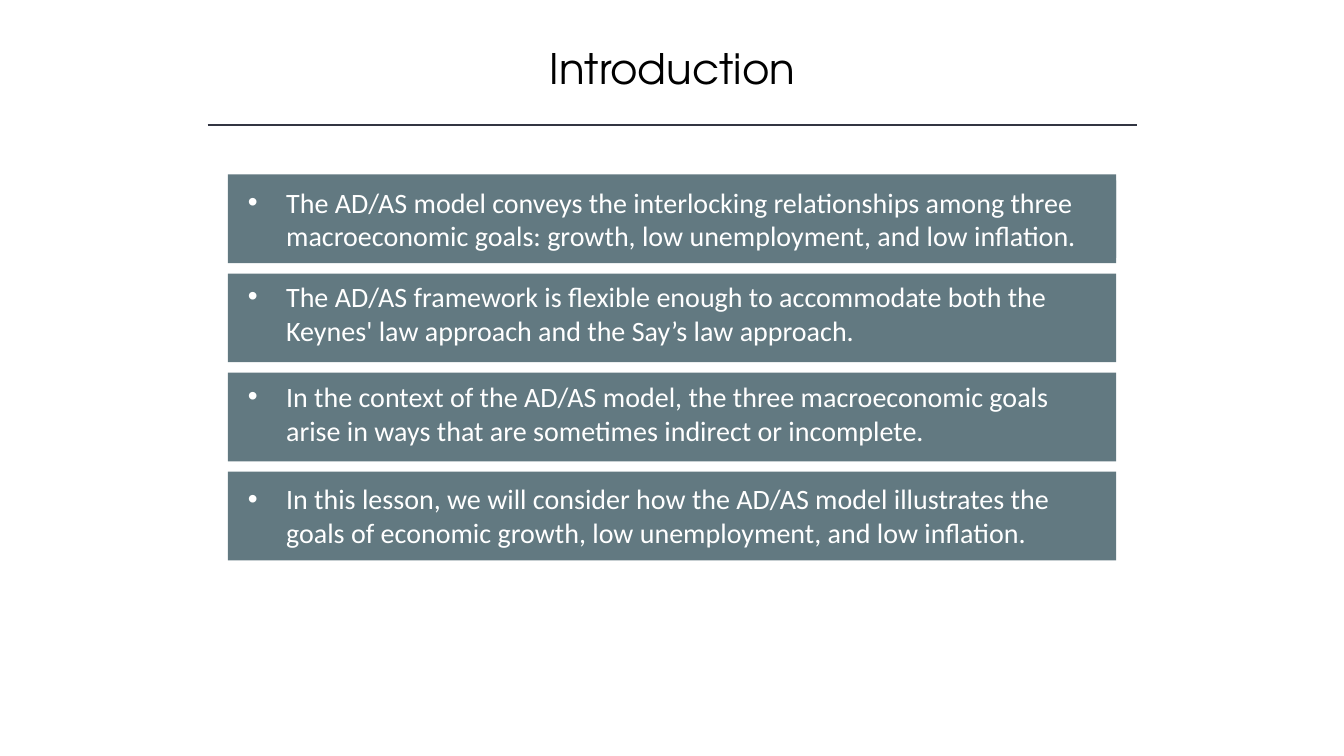
from dataclasses import dataclass

from lxml import etree
from pptx import Presentation
from pptx.dml.color import RGBColor
from pptx.enum.shapes import MSO_CONNECTOR, MSO_SHAPE
from pptx.enum.text import MSO_ANCHOR, MSO_AUTO_SIZE, PP_ALIGN
from pptx.oxml.ns import qn
from pptx.shapes.autoshape import Shape
from pptx.shapes.shapetree import GroupShapes, SlideShapes
from pptx.util import Inches, Pt

RECT = MSO_SHAPE.RECTANGLE
STRAIGHT = MSO_CONNECTOR.STRAIGHT
TOP = MSO_ANCHOR.TOP
GROW = MSO_AUTO_SIZE.SHAPE_TO_FIT_TEXT
LEFT, CENTER = PP_ALIGN.LEFT, PP_ALIGN.CENTER


@dataclass(frozen=True)
class Theme:
    ink: RGBColor = RGBColor(0, 0, 0)
    rule: RGBColor = RGBColor(0x32, 0x35, 0x42)
    bar: RGBColor = RGBColor(0x62, 0x79, 0x81)
    pale: RGBColor = RGBColor(255, 255, 255)
    head_font: str = "TeX Gyre Adventor"
    body_font: str = "Calibri"
    head_size: Pt = Pt(30)
    body_size: Pt = Pt(20)
    rule_width: Pt = Pt(1)


@dataclass(frozen=True)
class Box:
    left: float
    top: float
    width: float
    height: float

    def place(self) -> tuple[Inches, ...]:
        """Give the four lengths in the order python-pptx takes them."""
        return tuple(map(Inches, (self.left, self.top, self.width, self.height)))


@dataclass(frozen=True)
class Point:
    text: str
    drop: float  # from the top of the bar to the top of its label
    width: float = 8.54


THEME = Theme()
TITLE = Box(1.72, 0.37, 9.9, 0.61)
FIRST = Box(2.26, 1.73, 8.81, 0.88)
PITCH = (4.68 - 1.73) / 3
INSET, LABEL_HIGH, HANG = 0.1, 0.77, 0.38
POINTS = (
    Point("The AD/AS model conveys the interlocking relationships among three "
          "macroeconomic goals: growth, low unemployment, and low inflation.", 0.06, 8.71),
    Point("The AD/AS framework is flexible enough to accommodate both the "
          "Keynes' law approach and the Say’s law approach.", 0.01),
    Point("In the context of the AD/AS model, the three macroeconomic goals "
          "arise in ways that are sometimes indirect or incomplete.", 0.02),
    Point("In this lesson, we will consider how the AD/AS model illustrates the "
          "goals of economic growth, low unemployment, and low inflation.", 0.05),
)
FRAME = {"word_wrap": True, "auto_size": GROW, "vertical_anchor": TOP}
HEAD = {"name": THEME.head_font, "size": THEME.head_size}
BODY = {"name": THEME.body_font, "size": THEME.body_size}


def apply(target: object, form: dict[str, object]) -> None:
    for key, value in form.items():
        setattr(target, key, value)


def write(shape: Shape, text: str, font: dict[str, object],
          color: RGBColor, align: PP_ALIGN) -> None:
    frame = shape.text_frame
    apply(frame, FRAME)
    para = frame.paragraphs[0]
    para.alignment = align
    run = para.add_run()
    run.text = text
    apply(run.font, font)
    run.font.color.rgb = color


def add_bullet(shape: Shape) -> None:
    """Hang the first paragraph on a round bullet."""
    props = shape.text_frame.paragraphs[0]._p.get_or_add_pPr()
    props.set("marL", str(Inches(HANG)))
    props.set("indent", str(-Inches(HANG)))
    etree.SubElement(props, qn("a:buFont")).set("typeface", "Arial")
    etree.SubElement(props, qn("a:buChar")).set("char", "•")


def add_rect(shapes: GroupShapes, box: Box) -> Shape:
    rect = shapes.add_shape(RECT, *box.place())
    rect.shadow.inherit = False
    rect.fill.solid()
    rect.fill.fore_color.rgb = THEME.bar
    rect.line.fill.background()
    return rect


def add_title(shapes: SlideShapes) -> None:
    title = shapes.add_textbox(*TITLE.place())
    sides = ("left", "top", "right", "bottom")
    apply(title.text_frame, {f"margin_{side}": Inches(0.05) for side in sides})
    write(title, "Introduction", HEAD, THEME.ink, CENTER)


def add_rule(shapes: SlideShapes) -> None:
    rule = shapes.add_connector(
        STRAIGHT, Inches(2.06), Inches(1.24), Inches(11.28), Inches(1.24))
    rule.line.color.rgb = THEME.rule
    rule.line.width = THEME.rule_width
    etree.SubElement(rule._element.spPr, qn("a:effectLst"))


def add_point(shapes: SlideShapes, row: int, point: Point) -> None:
    top = FIRST.top + row * PITCH
    group = shapes.add_group_shape().shapes
    add_rect(group, Box(FIRST.left, top, FIRST.width, FIRST.height))
    label = add_rect(
        group, Box(FIRST.left + INSET, top + point.drop, point.width, LABEL_HIGH))
    write(label, point.text, BODY, THEME.pale, LEFT)
    add_bullet(label)


def main() -> None:
    deck = Presentation()
    apply(deck, {"slide_width": Inches(13.33), "slide_height": Inches(7.5)})
    shapes = deck.slides.add_slide(deck.slide_layouts[6]).shapes
    add_title(shapes)
    add_rule(shapes)
    for row, point in enumerate(POINTS):
        add_point(shapes, row, point)
    deck.save("out.pptx")


if __name__ == "__main__":
    main()
